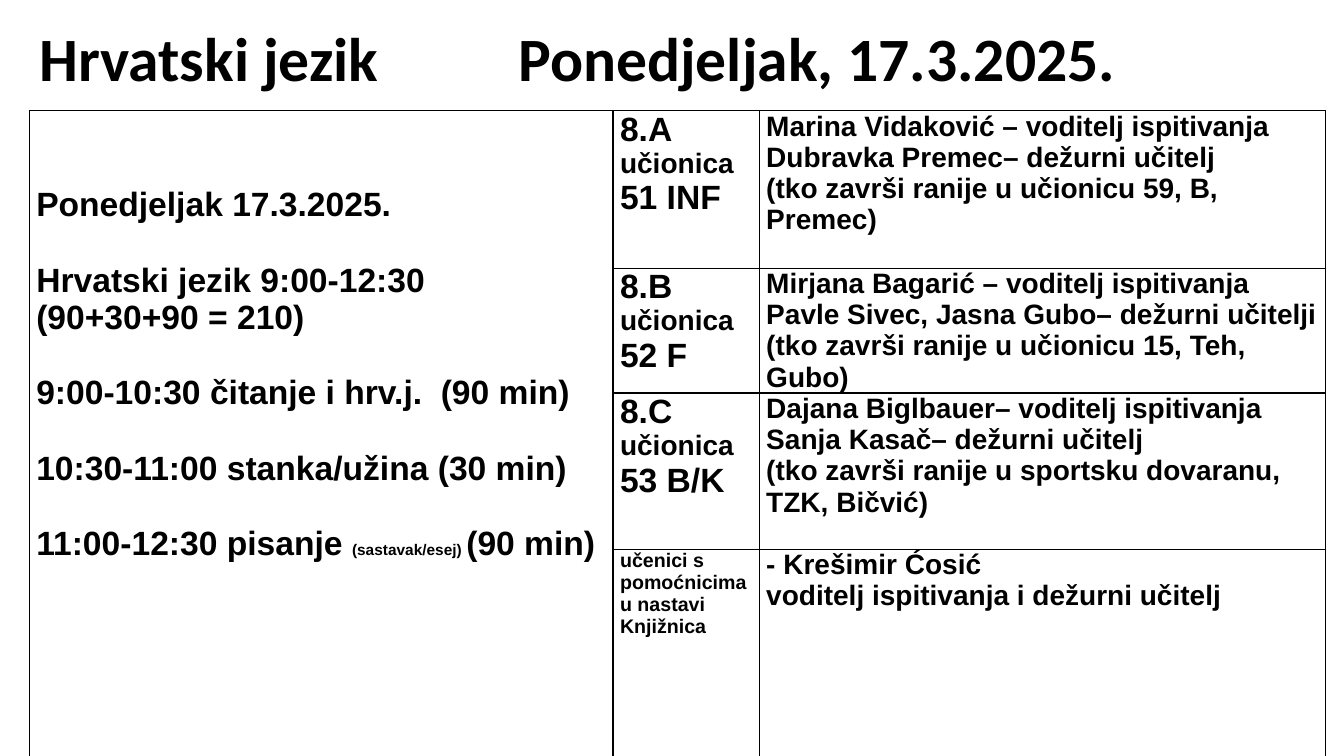
from lxml.etree import SubElement
from pptx import Presentation
from pptx.dml.color import RGBColor
from pptx.enum.text import MSO_ANCHOR, MSO_AUTO_SIZE, PP_ALIGN
from pptx.oxml.ns import qn
from pptx.util import Inches, Pt

COLORS = {"text": "000000", "border": "000000", "background": "FFFFFF"}
COLUMN_WIDTHS = (5.79, 1.45, 5.62)
ROW_HEIGHTS = (1.56, 1.24, 1.55, 2.1)
LINE_GAP = 27  # points, one line of the schedule

# Each entry: gap before in points, then (text, size) runs
SCHEDULE = [
    (0, [("Ponedjeljak 17.3.2025.", 24)]),
    (LINE_GAP, [("Hrvatski jezik 9:00-12:30", 24)]),
    (0, [("(90+30+90 = 210)", 24)]),
    (LINE_GAP, [("9:00-10:30 čitanje i hrv.j.  (90 min)", 24)]),
    (LINE_GAP, [("10:30-11:00 stanka/užina (30 min)", 24)]),
    (LINE_GAP, [("11:00-12:30 pisanje ", 24), ("(sastavak/esej) ", 11), ("(90 min)", 24)]),
]

# Each entry: (text, size) lines for the room, then lines for the staff
ROOMS = [
    ([("8.A", 24), ("učionica", 20), ("51 INF", 24)],
     ["Marina Vidaković – voditelj ispitivanja",
      "Dubravka Premec– dežurni učitelj",
      "(tko završi ranije u učionicu 59, B, Premec)"]),
    ([("8.B", 24), ("učionica", 20), ("52 F", 24)],
     ["Mirjana Bagarić – voditelj ispitivanja",
      "Pavle Sivec, Jasna Gubo– dežurni učitelji",
      "(tko završi ranije u učionicu 15, Teh, Gubo)"]),
    ([("8.C", 24), ("učionica", 20), ("53 B/K", 24)],
     ["Dajana Biglbauer– voditelj ispitivanja",
      "Sanja Kasač– dežurni učitelj",
      "(tko završi ranije u sportsku dovaranu, TZK, Bičvić)"]),
    ([("učenici s pomoćnicima u nastavi", 14), ("Knjižnica", 14)],
     ["- Krešimir Ćosić",
      "voditelj ispitivanja i dežurni učitelj"]),
]


def add_run(paragraph, text, size, font="Arial"):
    run = paragraph.add_run()
    run.text = text
    run.font.name = font
    run.font.size = Pt(size)
    run.font.bold = True
    run.font.color.rgb = RGBColor.from_string(COLORS["text"])


def fill_cell(cell, paragraphs, top=0):
    cell.margin_left = cell.margin_right = Inches(0.07)
    cell.margin_top, cell.margin_bottom = Inches(top), 0
    cell.vertical_anchor = MSO_ANCHOR.TOP
    frame = cell.text_frame
    for index, (gap, runs) in enumerate(paragraphs):
        paragraph = frame.add_paragraph() if index else frame.paragraphs[0]
        paragraph.space_before = Pt(gap)
        for text, size in runs:
            add_run(paragraph, text, size)


def outline_cell(cell):
    properties = cell._tc.get_or_add_tcPr()
    for side in ("a:lnL", "a:lnR", "a:lnT", "a:lnB"):
        line = SubElement(properties, qn(side), w=str(Pt(1)))
        fill = SubElement(line, qn("a:solidFill"))
        SubElement(fill, qn("a:srgbClr"), val=COLORS["border"])
    cell.fill.background()


def add_title(slide, left, top, width, height):
    title = slide.shapes.title
    title.left, title.top = Inches(left), Inches(top)
    title.width, title.height = Inches(width), Inches(height)
    frame = title.text_frame
    frame.word_wrap = True
    frame.auto_size = MSO_AUTO_SIZE.NONE
    frame.vertical_anchor = MSO_ANCHOR.MIDDLE
    heading = frame.paragraphs[0]
    heading.alignment = PP_ALIGN.LEFT
    heading.line_spacing = 0.9
    tabs = SubElement(heading._p.get_or_add_pPr(), qn("a:tabLst"))
    SubElement(tabs, qn("a:tab"), pos=str(Inches(4.75)), algn="l")
    add_run(heading, "Hrvatski jezik\tPonedjeljak, 17.3.2025.", 44, "Calibri")


def add_duty_table(slide, left, top):
    table = slide.shapes.add_table(
        len(ROW_HEIGHTS), len(COLUMN_WIDTHS), Inches(left), Inches(top),
        Inches(sum(COLUMN_WIDTHS)), Inches(sum(ROW_HEIGHTS))).table
    table.first_row = table.horz_banding = False
    for column, width in zip(table.columns, COLUMN_WIDTHS):
        column.width = Inches(width)
    for row, height in zip(table.rows, ROW_HEIGHTS):
        row.height = Inches(height)
    for cell in table.iter_cells():
        outline_cell(cell)

    schedule_cell = table.cell(0, 0)
    schedule_cell.merge(table.cell(len(ROW_HEIGHTS) - 1, 0))
    fill_cell(schedule_cell, SCHEDULE, top=0.75)
    for index, (room, staff) in enumerate(ROOMS):
        fill_cell(table.cell(index, 1), [(0, [line]) for line in room])
        fill_cell(table.cell(index, 2), [(0, [(line, 20)]) for line in staff])


def main():
    deck = Presentation()
    deck.slide_width, deck.slide_height = Inches(13.33), Inches(7.5)
    slide = deck.slides.add_slide(deck.slide_layouts[5])
    slide.background.fill.solid()
    slide.background.fill.fore_color.rgb = RGBColor.from_string(COLORS["background"])
    add_title(slide, 0.29, 0.13, 10.93, 0.97)
    add_duty_table(slide, 0.29, 1.1)
    deck.save("out.pptx")


if __name__ == "__main__":
    main()
